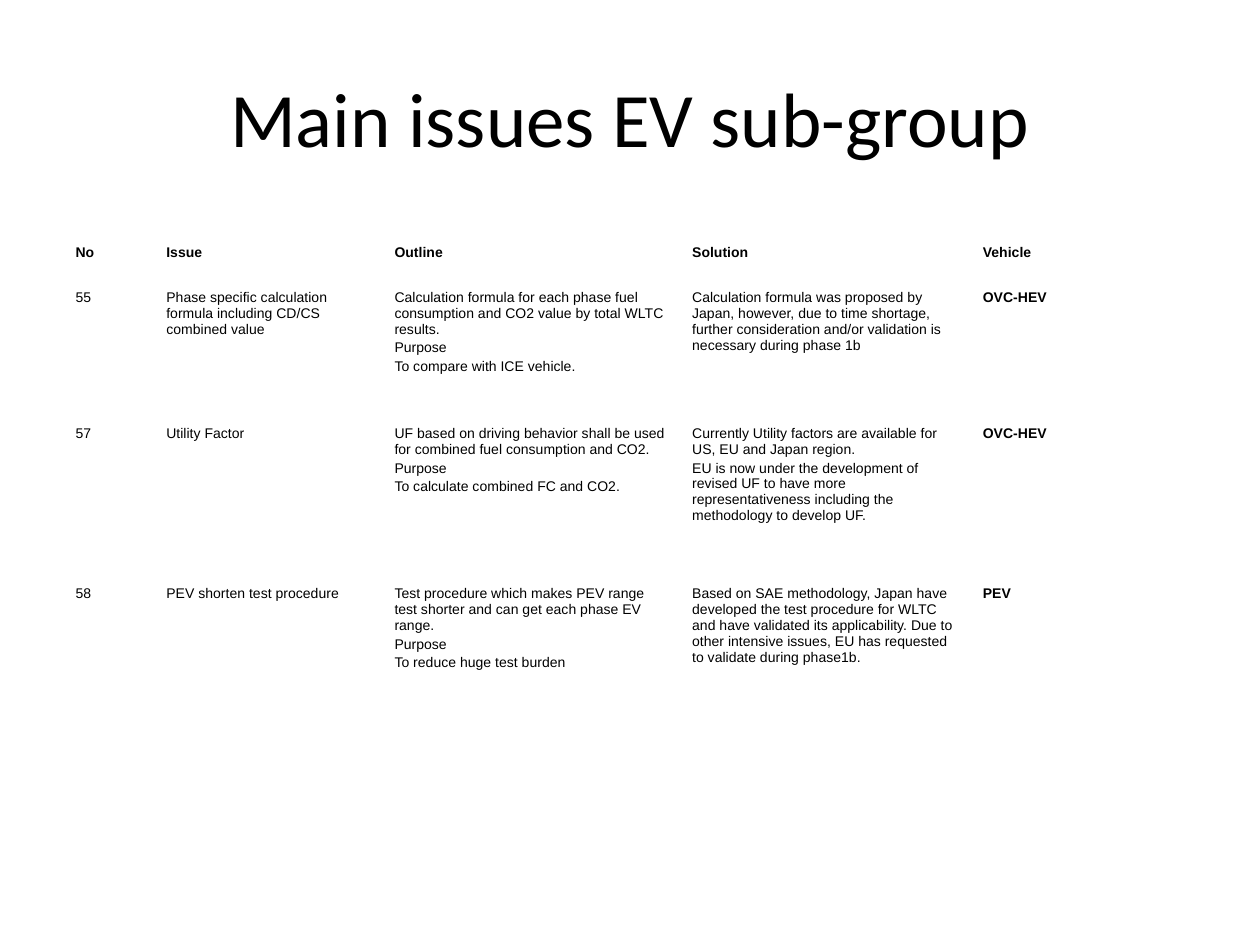
from dataclasses import dataclass

from pptx import Presentation
from pptx.dml.color import RGBColor
from pptx.enum.text import MSO_ANCHOR as Anchor, PP_ALIGN as Align
from pptx.util import Cm, Pt


@dataclass(frozen=True)
class Theme:
    ink: RGBColor = RGBColor(0, 0, 0)
    title_font: str = "Calibri"
    body_font: str = "Arial"
    title_size: float = 44
    body_size: float = 8
    para_gap: float = 1.6


@dataclass(frozen=True)
class Issue:
    no: str
    name: str
    outline: str
    purpose: str
    solution: str
    vehicle: str
    height: float  # cm

    def cells(self) -> list[str]:
        outline = "\n".join((self.outline, "Purpose", self.purpose))
        return [self.no, self.name, outline, self.solution, self.vehicle]


THEME = Theme()
HEADERS = ["No", "Issue", "Outline", "Solution", "Vehicle"]
COL_WIDTHS = [1.83, 4.6, 6.0, 5.86, 4.57]  # cm
HEADER_HEIGHT = 1.27
LEFT, WIDTH = 1.27, 22.86

ISSUES = [
    Issue("55", "Phase specific calculation formula including CD/CS combined value",
          "Calculation formula for each phase fuel consumption and CO2 value by total WLTC results.",
          "To compare with ICE vehicle.",
          "Calculation formula was proposed by Japan, however, due to time shortage, "
          "further consideration and/or validation is necessary during phase 1b",
          "OVC-HEV", 2.74),
    Issue("57", "Utility Factor",
          "UF based on driving behavior shall be used for combined fuel consumption and CO2.",
          "To calculate combined FC and CO2.",
          "Currently Utility factors are available for US, EU and Japan region.\n"
          "EU is now under the development of revised UF to have more representativeness "
          "including the methodology to develop UF.",
          "OVC-HEV", 3.23),
    Issue("58", "PEV shorten test procedure",
          "Test procedure which makes PEV range test shorter and can get each phase EV range.",
          "To reduce huge test burden",
          "Based on SAE methodology, Japan have developed the test procedure for WLTC and "
          "have validated its applicability. Due to other intensive issues, EU has requested "
          "to validate during phase1b.",
          "PEV", 2.79),
]


def write(tf, text: str, *, font: str = THEME.body_font, size: float = THEME.body_size,
          bold: bool = False, align: Align = Align.LEFT, gap: float = THEME.para_gap) -> None:
    """Fill a text frame, one paragraph per line of text."""
    tf.word_wrap = True
    for i, line in enumerate(text.split("\n")):
        p = tf.add_paragraph() if i else tf.paragraphs[0]
        p.alignment = align
        p.space_before = Pt(gap)
        r = p.add_run()
        r.text = line
        r.font.name, r.font.size, r.font.bold = font, Pt(size), bold
        r.font.color.rgb = THEME.ink


def add_title(s, text: str) -> None:
    tf = s.shapes.add_textbox(Cm(LEFT), Cm(0.76), Cm(WIDTH), Cm(3.18)).text_frame
    tf.vertical_anchor = Anchor.MIDDLE
    write(tf, text, font=THEME.title_font, size=THEME.title_size, align=Align.CENTER, gap=0)


def add_issue_table(s, issues: list[Issue]) -> None:
    rows = [HEADERS] + [issue.cells() for issue in issues]
    heights = [HEADER_HEIGHT] + [issue.height for issue in issues]
    table = s.shapes.add_table(len(rows), len(HEADERS), Cm(LEFT), Cm(4.45),
                               Cm(WIDTH), Cm(sum(heights))).table
    table.first_row = table.horz_banding = False
    for col, width in zip(table.columns, COL_WIDTHS):
        col.width = Cm(width)
    for i, (row, height, texts) in enumerate(zip(table.rows, heights, rows)):
        row.height = Cm(height)
        for j, (cell, text) in enumerate(zip(row.cells, texts)):
            cell.fill.background()
            cell.vertical_anchor = Anchor.TOP if i else Anchor.MIDDLE
            # The header row and the vehicle column are bold
            write(cell.text_frame, text, bold=i == 0 or j == len(HEADERS) - 1)


def main() -> None:
    prs = Presentation()
    prs.slide_width, prs.slide_height = Cm(25.4), Cm(19.05)
    s = prs.slides.add_slide(prs.slide_layouts[6])

    # Heading
    add_title(s, "Main issues EV sub-group")

    # Issues
    add_issue_table(s, ISSUES)

    prs.save("out.pptx")


if __name__ == "__main__":
    main()
